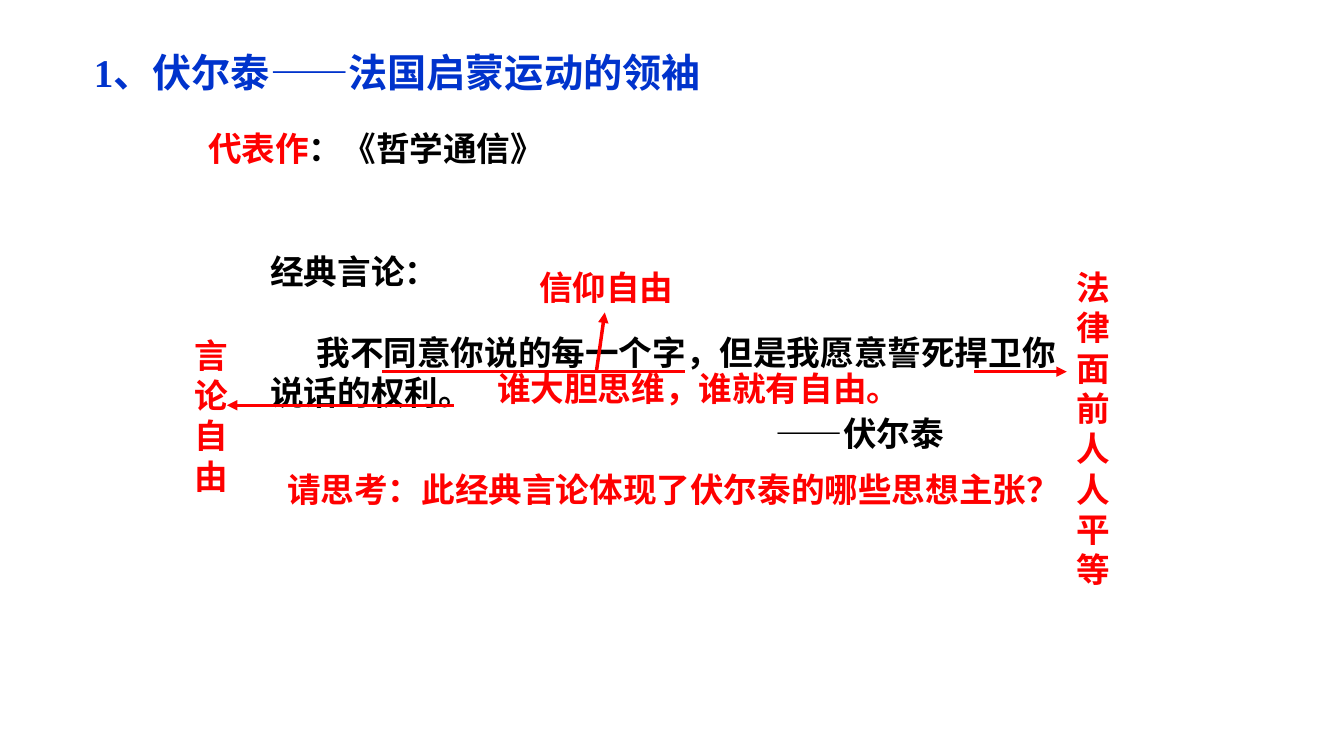
from lxml import etree
from pptx import Presentation
from pptx.dml.color import RGBColor
from pptx.enum.shapes import MSO_CONNECTOR
from pptx.enum.text import MSO_AUTO_SIZE
from pptx.oxml.ns import qn
from pptx.util import Inches, Pt

STRAIGHT = MSO_CONNECTOR.STRAIGHT
GROW = MSO_AUTO_SIZE.SHAPE_TO_FIT_TEXT
COLORS = {"title": "0033CC", "accent": "FF0000", "body": "000000"}
UNIT = Inches(1 / 12)
COLUMNS, ROWS = 160, 90


def grid(*values):
    return [round(value * UNIT) for value in values]


def style(font, color, size=24, name="Arial"):
    font.name = name
    font.size = Pt(size)
    font.bold = True
    font.color.rgb = RGBColor.from_string(COLORS[color])


def add_text_frame(shapes, box, wrap=True):
    text_frame = shapes.add_textbox(*grid(*box)).text_frame
    text_frame.word_wrap = wrap
    text_frame.auto_size = GROW
    return text_frame


def add_label(shapes, box, text, color="accent", wrap=True, **font):
    paragraph = add_text_frame(shapes, box, wrap).paragraphs[0]
    paragraph.text = text
    style(paragraph.font, color, **font)


def add_rule(shapes, start, end, arrow=True):
    connector = shapes.add_connector(STRAIGHT, *grid(*start, *end))
    connector.line.color.rgb = RGBColor.from_string(COLORS["accent"])
    connector.line.width = Pt(2.5)
    if arrow:
        line = connector.line._get_or_add_ln()
        etree.SubElement(line, qn("a:tailEnd"), type="triangle")
    etree.SubElement(connector._element.spPr, qn("a:effectLst"))


def add_quotation(shapes):
    text_frame = add_text_frame(shapes, (31, 29.3, 97, 25.2))
    lines = [
        ("经典言论：", 0, 0, 0),
        ("我不同意你说的每一个字，但是我愿意誓死捍卫你说话的权利。", 29, 0, 5.5),
        ("——伏尔泰", 0, 60.2, 0),
    ]
    for index, (text, before, margin, indent) in enumerate(lines):
        paragraph = text_frame.add_paragraph() if index else text_frame.paragraphs[0]
        paragraph.text = text
        paragraph.space_before = Pt(before)
        style(paragraph.font, "body")
        properties = paragraph._p.get_or_add_pPr()
        for key, value in zip(("marL", "indent"), grid(margin, indent)):
            properties.set(key, str(value))


def add_masterwork(shapes):
    paragraph = add_text_frame(shapes, (23.6, 14.6, 76.2, 6)).paragraphs[0]
    for text, color in (("代表作", "accent"), ("：《哲学通信》", "body")):
        run = paragraph.add_run()
        run.text = text
        style(run.font, color)


def add_callout(shapes, box, text, rules, wrap=True):
    group = shapes.add_group_shape().shapes
    for rule in rules:
        add_rule(group, *rule)
    add_label(group, box, text, wrap=wrap)


def main():
    presentation = Presentation()
    presentation.slide_width, presentation.slide_height = grid(COLUMNS, ROWS)
    slide = presentation.slides.add_slide(presentation.slide_layouts[6])
    shapes = slide.shapes

    add_quotation(shapes)
    add_label(shapes, (33, 55.2, 94.8, 6),
              "请思考：此经典言论体现了伏尔泰的哪些思想主张？", wrap=False)
    add_label(shapes, (58, 43.2, 50.6, 6), "谁大胆思维，谁就有自由。", wrap=False)

    upper, lower = 44.25, 48.25
    add_callout(shapes, (22, 39.25, 8.2, 20.4), "言论自由",
                [((54, lower), (27, lower))])
    add_callout(shapes, (127, 31.2, 7.2, 39.6), "法律面前人人平等",
                [((116, upper), (127, upper))])
    add_callout(shapes, (63, 31.2, 18.5, 6), "信仰自由",
                [((45.5, upper), (81.5, upper), False),
                 ((71, upper), (72, 37.2))], wrap=False)

    add_label(shapes, (10, 5.2, 76.5, 6.85), "1、伏尔泰——法国启蒙运动的领袖",
              color="title", size=28, name="Times New Roman")
    add_masterwork(shapes)
    presentation.save("out.pptx")


if __name__ == "__main__":
    main()
